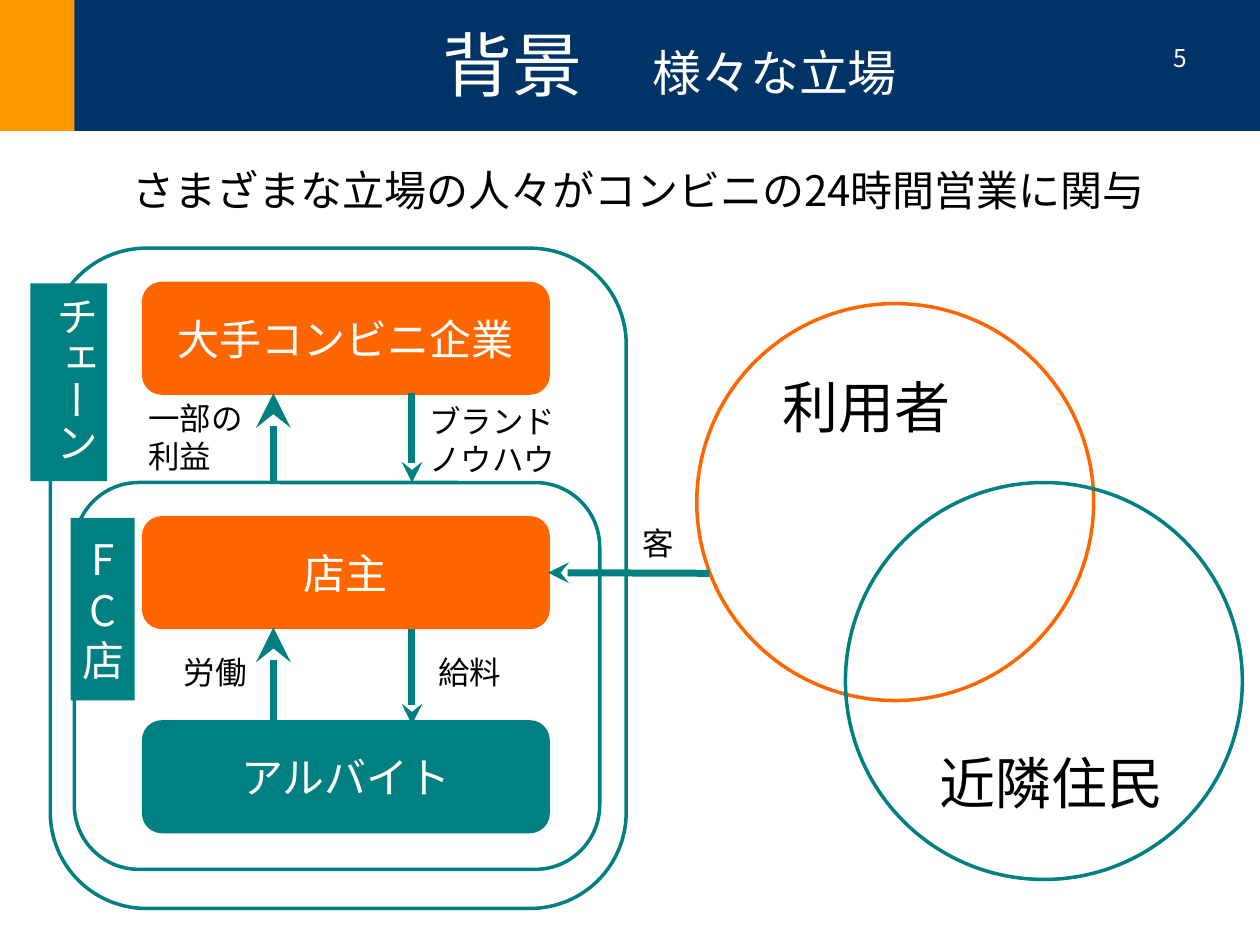
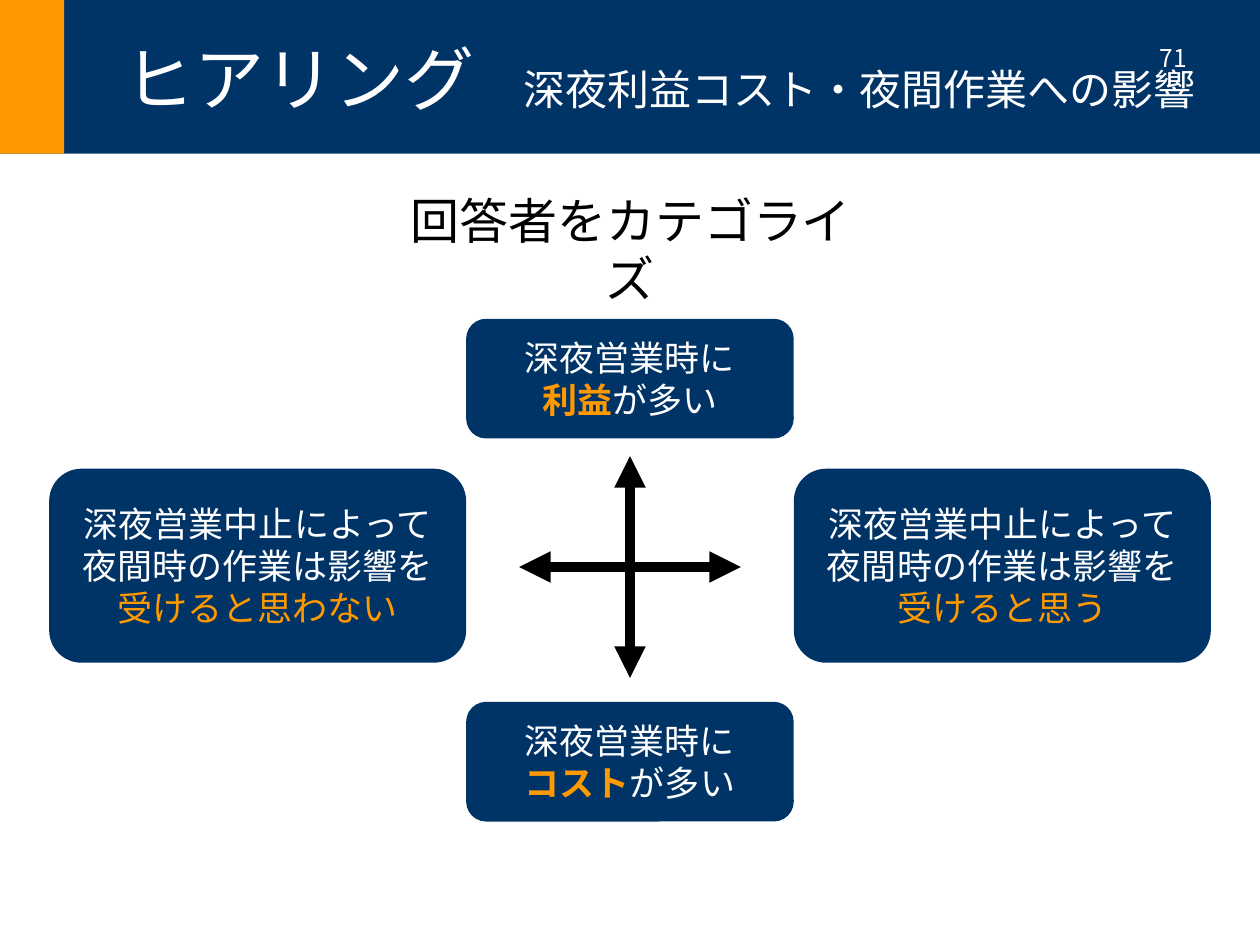
from lxml import etree
from pptx import Presentation
from pptx.dml.color import RGBColor
from pptx.enum.shapes import MSO_CONNECTOR, MSO_SHAPE
from pptx.enum.text import MSO_ANCHOR, MSO_AUTO_SIZE, PP_ALIGN
from pptx.oxml.ns import qn
from pptx.util import Inches, Pt

RECT, ROUND, OVAL = MSO_SHAPE.RECTANGLE, MSO_SHAPE.ROUNDED_RECTANGLE, MSO_SHAPE.OVAL
LEFT, CENTER, RIGHT = PP_ALIGN.LEFT, PP_ALIGN.CENTER, PP_ALIGN.RIGHT
TOP, MIDDLE = MSO_ANCHOR.TOP, MSO_ANCHOR.MIDDLE
STRAIGHT = MSO_CONNECTOR.STRAIGHT

FONT = "Noto Sans CJK JP"
COLORS = {"navy": "003366", "amber": "FF9900", "orange": "FF6600",
          "teal": "008080", "white": "FFFFFF", "black": "000000"}

# Grid of 100 columns by 75 rows of square cells
WIDTH, HEIGHT = Inches(10), Inches(7.5)
CELL = WIDTH // 100


def cells(*values):
    return [round(v * CELL) for v in values]


def rgb(name):
    return RGBColor.from_string(COLORS[name])


def inside(box, x, y, w, h):
    """Box given relative to the corner of another box."""
    return box[0] + x, box[1] + y, w, h


def write(shape, paragraphs, size, color, align=LEFT, anchor=TOP):
    """Each paragraph is a list of runs: (text, overrides)."""
    tf = shape.text_frame
    tf.word_wrap = True
    tf.auto_size = MSO_AUTO_SIZE.NONE
    tf.vertical_anchor = anchor
    for i, runs in enumerate(paragraphs):
        p = tf.paragraphs[0] if i == 0 else tf.add_paragraph()
        p.alignment = align
        for text, style in runs:
            r = p.add_run()
            r.text = text
            r.font.name = FONT
            r.font.size = Pt(style.get("size", size))
            r.font.bold = style.get("bold", False)
            r.font.color.rgb = rgb(style.get("color", color))
            ea = etree.SubElement(r.font._element, qn("a:ea"))
            ea.set("typeface", FONT)


def plain(*lines):
    return [[(line, {})] for line in lines]


def label(s, box, lines, size=18, color="black", align=LEFT):
    sp = s.shapes.add_textbox(*cells(*box))
    write(sp, plain(*lines), size, color, align)


def block(s, kind, box, fill=None, line=None):
    sp = s.shapes.add_shape(kind, *cells(*box))
    sp.shadow.inherit = False
    if fill:
        sp.fill.solid()
        sp.fill.fore_color.rgb = rgb(fill)
    else:
        sp.fill.background()
    if line:
        sp.line.color.rgb = rgb(line)
        sp.line.width = Pt(2)
    else:
        sp.line.fill.background()
    return sp


def arrow(s, start, end, color, width, head, both=False, size="med"):
    cn = s.shapes.add_connector(STRAIGHT, *cells(*start, *end))
    cn.line.color.rgb = rgb(color)
    cn.line.width = Pt(width)
    ln = cn.line._get_or_add_ln()
    for tag in ("a:headEnd", "a:tailEnd") if both else ("a:tailEnd",):
        tip = etree.SubElement(ln, qn(tag))
        for key, value in (("type", head), ("w", size), ("len", size)):
            tip.set(key, value)
    etree.SubElement(cn._element.spPr, qn("a:effectLst"))
    return cn


def add_slide(prs, band, accent_width, title_box, title_runs, number):
    """Title-only slide with navy band, amber accent, title and number."""
    s = prs.slides.add_slide(prs.slide_layouts[5])
    block(s, RECT, band, "navy")
    block(s, RECT, inside(band, 0, 0, accent_width, band[3]), "amber")
    title = s.shapes.title
    title.left, title.top, title.width, title.height = cells(*title_box)
    write(title, [title_runs], 40, "white", CENTER, MIDDLE)
    title.element.getparent().append(title.element)  # in front of the band
    label(s, (71.9, 2.9, 23.3, 5.2), [number], 14, "white", RIGHT)
    return s


def chain_panel(s, box):
    """Chain and franchise frames, their members and the flows between them."""
    x, y, w, h = box
    down, up = x + 28.7, x + 17.7
    frame_top = y + 18.6

    def flow(col, start, end, size="med"):
        arrow(s, (col, start), (col, end), "teal", 4, "stealth", size=size)

    # Wage arrow lies behind the member boxes
    flow(down, y + 27.9, y + 37.8)

    # Members
    members = {}
    for name, top, color in (("大手コンビニ企業", 2.8, "orange"),
                             ("店主", 21.4, "orange"),
                             ("アルバイト", 37.6, "teal")):
        sp = block(s, ROUND, inside(box, 7.4, top, 32.1, 8.7), color, color)
        write(sp, plain(name), 24, "white", CENTER, MIDDLE)
        members[name] = sp

    # Frames and their tags
    block(s, ROUND, inside(box, 1.9, 18.6, 41.7, 30.7), line="teal")
    block(s, ROUND, box, line="teal")
    tag = block(s, RECT, inside(box, 1.6, 21.4, 5.1, 14.5), "teal")
    write(tag, plain("FC店"), 24, "white", CENTER, MIDDLE)
    tag = block(s, RECT, inside(box, -1.6, 2.8, 6.1, 15.7), "teal")
    write(tag, plain("チェーン"), 24, "white")
    tag.text_frame._txBody.bodyPr.set("vert", "eaVert")

    # Other flows
    flow(down, y + 11.5, frame_top)
    flow(up, frame_top, y + 11.5, "lg")
    flow(up, y + 39.1, y + 30.1, "lg")

    # Flow labels
    for place, lines in (((29.1, 11.7, 17.3, 7.1), ("ブランド", "ノウハウ")),
                         ((6.8, 11.5, 10.4, 7.1), ("一部の利益",)),
                         ((29.8, 31.6, 10.4, 4), ("給料",)),
                         ((9.6, 31.6, 7.8, 4), ("労働",))):
        label(s, inside(box, *place), lines)
    return members["店主"]


def public_circles(s, box):
    """Two overlapping circles, users and neighbours."""
    size = 31.5
    for x, y, color in ((0, 0, "orange"), (11.8, 14.2, "teal")):
        block(s, OVAL, inside(box, x, y, size, size), line=color)
    label(s, inside(box, 5.8, 5, 17.3, 6.4), ["利用者"], 32)
    label(s, inside(box, 18.3, 34.8, 21.1, 6.4), ["近隣住民"], 32)


def stakeholder_slide(prs):
    s = add_slide(prs, (0, -0.3, 100.4, 10.7), 5.9, (5.9, -0.3, 94.5, 10.7),
                  [("背景　", {}), ("様々な立場", {"size": 28})], "5")
    label(s, (9.5, 12.6, 87.3, 5),
          ["さまざまな立場の人々がコンビニの24時間営業に関与"], 24)
    owner = chain_panel(s, (4, 19.7, 45.7, 52.4))
    public_circles(s, (55.3, 24.1, 43.3, 45.7))

    # Customers come to the owner
    visit = arrow(s, (56.3, 45.5), (43.5, 45.5), "teal", 4, "stealth")
    visit.end_connect(owner, 3)
    label(s, (50, 41.1, 4.7, 4), ["客"])


def category_axes(s, box):
    """Crossed axes with a category box at each end."""
    x, y, w, h = box
    mid_x, mid_y, reach = x + w / 2, y + 19.7, 8.8
    for dx, dy in ((0, reach), (reach, 0)):
        arrow(s, (mid_x - dx, mid_y - dy), (mid_x + dx, mid_y + dy),
              "black", 6, "triangle", both=True)

    key = {"color": "amber"}
    strong = {"color": "amber", "bold": True}
    side_w, side_h, end_w, end_h = 33.1, 15.4, 26, 9.5
    first, second = "深夜営業中止によって", "夜間時の作業は影響を"
    ends = [((w - end_w) / 2, top, end_w, end_h,
             plain("深夜営業時に") + [[(word, strong), ("が多い", {})]])
            for top, word in ((0, "利益"), (h - end_h, "コスト"))]
    sides = [(0, 11.9, side_w, side_h,
              plain(first) + [[(second, {}), ("受けると思わない", key)]]),
             (w - side_w, 11.9, side_w, side_h,
              plain(first, second) + [[("受けると思う", key)]])]
    for *place, paragraphs in ends + sides:
        sp = block(s, ROUND, inside(box, *place), "navy")
        write(sp, paragraphs, 20, "white", CENTER, MIDDLE)


def hearing_slide(prs):
    s = add_slide(prs, (0, 0, 100, 12.2), 5.1, (4.8, -0.1, 95.2, 12.5),
                  [("ヒアリング", {}), ("　", {"size": 28}),
                   ("深夜利益コスト・夜間作業への影響", {"size": 24})], "71")
    label(s, (31.2, 14.6, 37.6, 5.7), ["回答者をカテゴライズ"], 28, align=CENTER)
    category_axes(s, (3.9, 25.3, 92.2, 39.9))


def main():
    prs = Presentation()
    prs.slide_width, prs.slide_height = WIDTH, HEIGHT
    stakeholder_slide(prs)
    hearing_slide(prs)
    prs.save("out.pptx")


if __name__ == "__main__":
    main()
